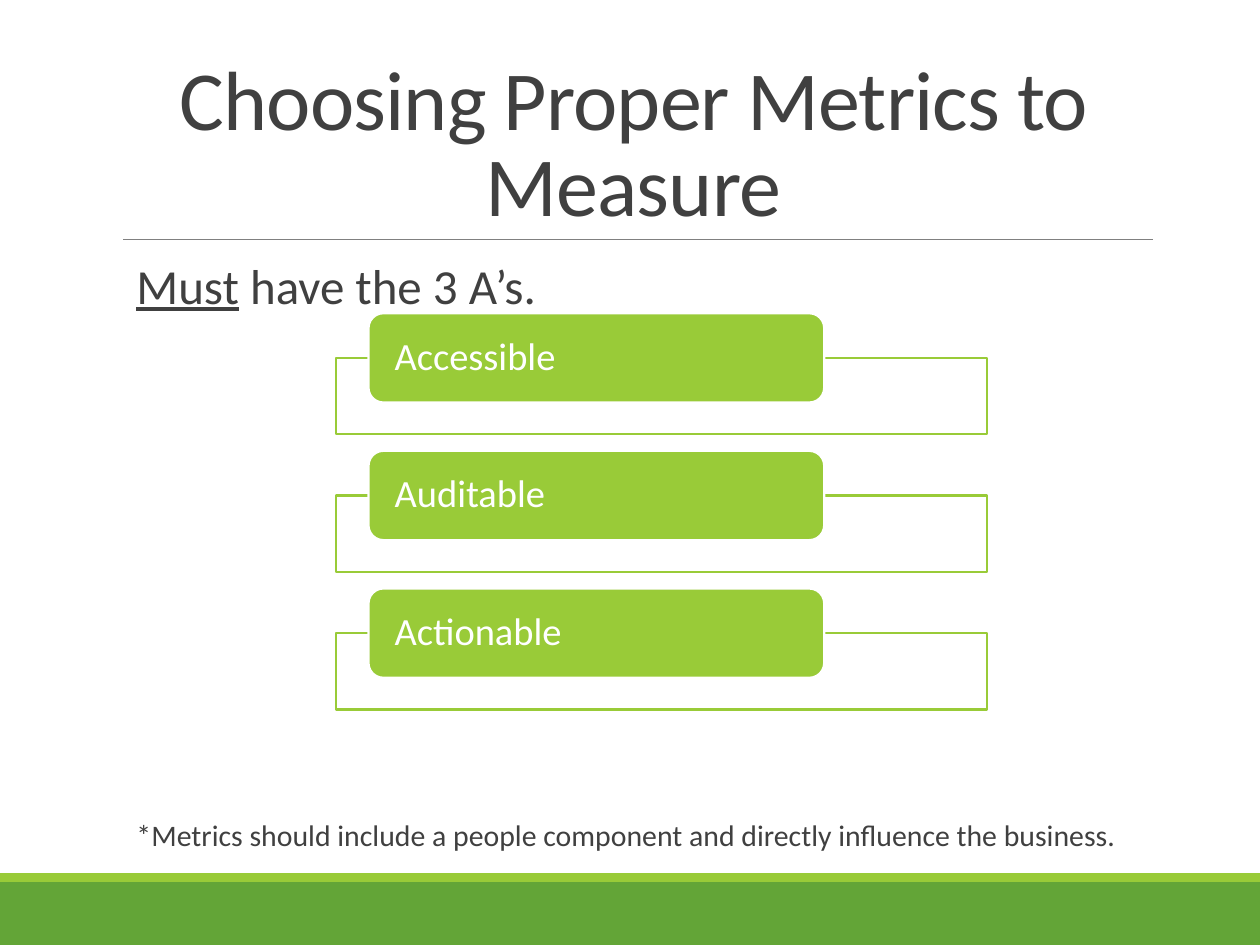
from lxml.etree import SubElement
from pptx import Presentation
from pptx.dml.color import RGBColor
from pptx.enum.shapes import MSO_CONNECTOR, MSO_SHAPE
from pptx.enum.text import MSO_ANCHOR, PP_ALIGN
from pptx.oxml.ns import qn
from pptx.util import Pt

GREEN = RGBColor(0x63, 0xA5, 0x37)
LIME = RGBColor(0x99, 0xCB, 0x38)
WHITE = RGBColor(0xFF, 0xFF, 0xFF)
GRAY = RGBColor(0x80, 0x80, 0x80)
DARK = RGBColor(0x40, 0x40, 0x40)

WIDTH, HEIGHT = 720, 540


def apply(target, values):
    for name, value in values.items():
        setattr(target, name, value)


def set_margins(frame, left, top, right, bottom):
    apply(frame, {
        "margin_left": Pt(left), "margin_top": Pt(top),
        "margin_right": Pt(right), "margin_bottom": Pt(bottom),
    })


def add_run(paragraph, text, size, color, underline=None):
    run = paragraph.add_run()
    run.text = text
    apply(run.font, {"name": "Calibri", "size": Pt(size), "underline": underline})
    run.font.color.rgb = color
    return run


def add_box(slide, kind, box, fill, line=None):
    shape = slide.shapes.add_shape(kind, *map(Pt, box))
    shape.shadow.inherit = False
    shape.fill.solid()
    shape.fill.fore_color.rgb = fill
    if line is None:
        shape.line.fill.background()
    else:
        shape.line.color.rgb = line
        shape.line.width = Pt(1.25)
    return shape


def add_footer(slide, left, top, width, height):
    stripe = 5
    add_box(slide, MSO_SHAPE.RECTANGLE, (left, top + stripe, width, height - stripe), GREEN)
    add_box(slide, MSO_SHAPE.RECTANGLE, (left, top, width, stripe), LIME)


def add_title(slide, left, top, width, height):
    rule = slide.shapes.add_connector(
        MSO_CONNECTOR.STRAIGHT, Pt(left + 5.5), Pt(top + height),
        Pt(left + width), Pt(top + height))
    rule.line.color.rgb = GRAY
    rule.line.width = Pt(0.5)
    SubElement(rule._element.spPr, qn("a:effectLst"))

    frame = slide.shapes.add_textbox(Pt(left), Pt(top), Pt(width), Pt(height)).text_frame
    apply(frame, {"word_wrap": True, "vertical_anchor": MSO_ANCHOR.BOTTOM})
    paragraph = frame.paragraphs[0]
    apply(paragraph, {"alignment": PP_ALIGN.CENTER, "line_spacing": 0.85})
    run = add_run(paragraph, "Choosing Proper Metrics to Measure", 48, DARK)
    run._r.get_or_add_rPr().set("spc", "-50")


def add_body(slide, left, top, width, height):
    frame = slide.shapes.add_textbox(Pt(left), Pt(top), Pt(width), Pt(height)).text_frame
    frame.word_wrap = True
    set_margins(frame, 0, 41, 0, 3.6)
    statement, footnote = frame.paragraphs[0], frame.add_paragraph()
    for paragraph in (statement, footnote):
        apply(paragraph, {"line_spacing": 0.7, "space_after": Pt(2)})
    footnote.space_before = Pt(292)
    add_run(statement, "Must", 28, DARK, True)
    add_run(statement, " have the 3 A’s.", 28, DARK)
    add_run(footnote, "*Metrics should include a people component and directly "
            "influence the business.", 17, DARK)


def add_quality_list(slide, left, top, width, height, labels):
    frame_height, label_height = 43.7, 51
    frame_offset = label_height / 2
    pitch = (height - frame_offset - frame_height) / (len(labels) - 1)
    for index, label in enumerate(labels):
        row_top = top + index * pitch
        outline = add_box(slide, MSO_SHAPE.RECTANGLE,
                          (left, row_top + frame_offset, width, frame_height), WHITE, LIME)
        color = outline._element.spPr.find(qn("a:solidFill"))[0]
        SubElement(color, qn("a:alpha"), val="90000")

        tab = add_box(slide, MSO_SHAPE.ROUNDED_RECTANGLE,
                      (left + width * 0.05, row_top, width * 0.7, label_height), LIME, WHITE)
        frame = tab.text_frame
        apply(frame, {"word_wrap": True, "vertical_anchor": MSO_ANCHOR.MIDDLE})
        set_margins(frame, 12.5, 0, 12.5, 0)
        paragraph = frame.paragraphs[0]
        apply(paragraph, {"alignment": PP_ALIGN.LEFT, "line_spacing": 0.9})
        add_run(paragraph, label, 22, WHITE)


def main():
    presentation = Presentation()
    apply(presentation, {"slide_width": Pt(WIDTH), "slide_height": Pt(HEIGHT)})
    slide = presentation.slides.add_slide(presentation.slide_layouts[6])
    add_footer(slide, 0, 499, WIDTH, 41)
    add_title(slide, 65, 22.5, 594, 114.5)
    add_body(slide, 78, 114, 581, 390)
    add_quality_list(slide, 192, 179, 372, 226.5, ["Accessible", "Auditable", "Actionable"])
    presentation.save("out.pptx")


if __name__ == "__main__":
    main()
